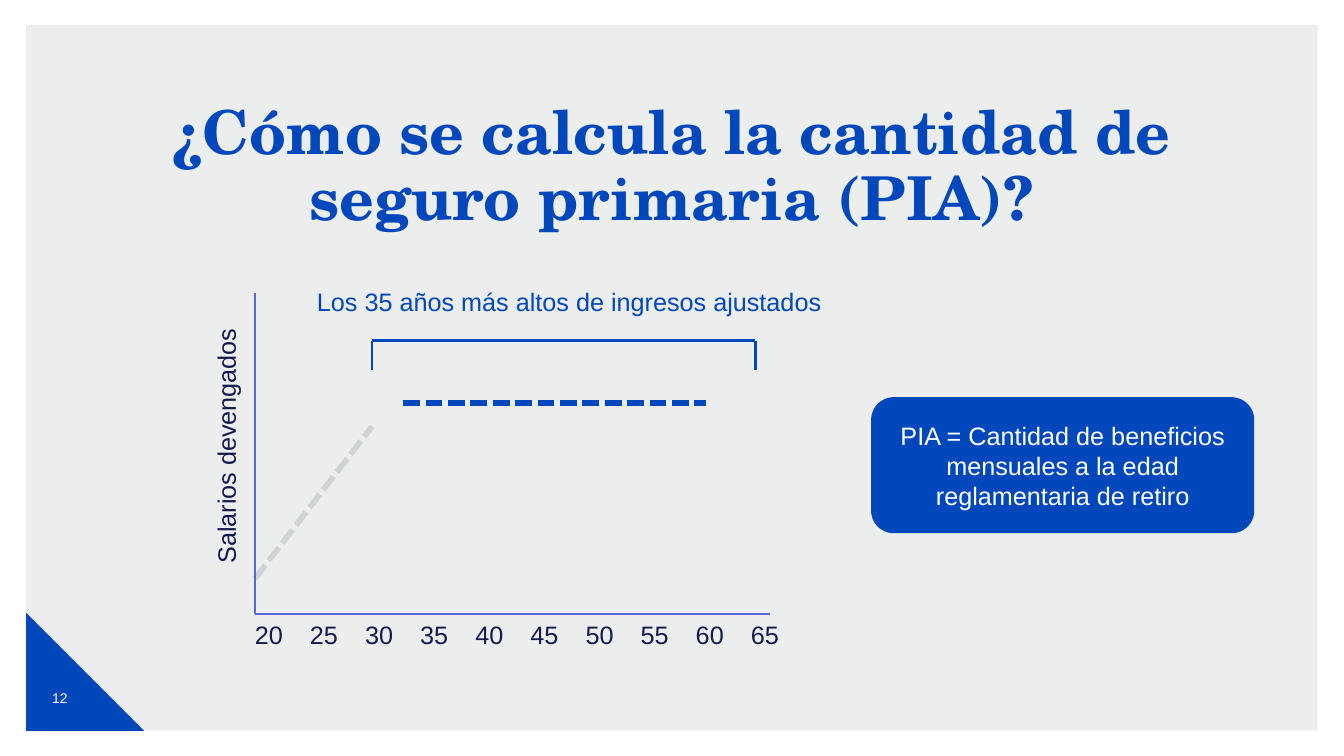
from dataclasses import dataclass

from lxml import etree
from pptx import Presentation
from pptx.dml.color import RGBColor
from pptx.enum.dml import MSO_LINE
from pptx.enum.shapes import MSO_CONNECTOR, MSO_SHAPE
from pptx.enum.text import MSO_ANCHOR, PP_ALIGN
from pptx.oxml.ns import qn
from pptx.util import Inches, Pt

STRAIGHT = MSO_CONNECTOR.STRAIGHT
RECTANGLE = MSO_SHAPE.RECTANGLE
RIGHT_TRIANGLE = MSO_SHAPE.RIGHT_TRIANGLE
ROUNDED = MSO_SHAPE.ROUNDED_RECTANGLE
DASH = MSO_LINE.SQUARE_DOT
CENTER = PP_ALIGN.CENTER
TOP, MIDDLE = MSO_ANCHOR.TOP, MSO_ANCHOR.MIDDLE

BLUE, NAVY, GRAY, WHITE = "0047BB", "141A4D", "D0D3D4", "FFFFFF"
AXIS_COLOR, CAPTION_BLUE = "5968D6", "0047BA"

AXIS_LEFT, AXIS_TOP, AXIS_RIGHT, AXIS_BOTTOM = 2.53, 2.91, 7.64, 6.09
BRACKET_LEFT, BRACKET_RIGHT, BRACKET_TOP, BRACKET_BOTTOM = 3.69, 7.49, 3.38, 3.67


@dataclass
class Label:
    text: str
    left: float
    top: float
    width: float
    height: float
    color: str
    size: float = 18
    font: str = "Arial"
    bold: bool = False
    anchor: MSO_ANCHOR = TOP
    line_spacing: float = 1.0
    rotation: float = 0
    left_inset: float = 0
    right_inset: float = 0


@dataclass
class Segment:
    x1: float
    y1: float
    x2: float
    y2: float
    color: str
    width: float
    dashed: bool = False


def rgb(color: str) -> RGBColor:
    return RGBColor.from_string(color)


def write_text(shape, text: str, color: str, size: float, font: str, bold: bool = False):
    frame = shape.text_frame
    frame.word_wrap = True
    frame.text = text
    paragraph = frame.paragraphs[0]
    paragraph.alignment = CENTER
    run_font = paragraph.runs[0].font
    run_font.name, run_font.size, run_font.bold = font, Pt(size), bold
    run_font.color.rgb = rgb(color)
    return paragraph


def add_label(slide, label: Label):
    shape = slide.shapes.add_textbox(
        Inches(label.left), Inches(label.top), Inches(label.width), Inches(label.height))
    shape.rotation = label.rotation
    paragraph = write_text(shape, label.text, label.color, label.size, label.font, label.bold)
    paragraph.line_spacing = label.line_spacing
    frame = shape.text_frame
    frame.vertical_anchor = label.anchor
    frame.margin_left = Inches(label.left_inset)
    frame.margin_right = Inches(label.right_inset)


def add_block(slide, kind, left: float, top: float, width: float, height: float, color: str):
    shape = slide.shapes.add_shape(
        kind, Inches(left), Inches(top), Inches(width), Inches(height))
    shape.shadow.inherit = False
    shape.fill.solid()
    shape.fill.fore_color.rgb = rgb(color)
    shape.line.fill.background()
    return shape


def style_line(line, color: str, width: float, dashed: bool):
    line.color.rgb = rgb(color)
    line.width = Pt(width)
    if dashed:
        line.dash_style = DASH


def add_segment(slide, segment: Segment):
    connector = slide.shapes.add_connector(
        STRAIGHT, Inches(segment.x1), Inches(segment.y1),
        Inches(segment.x2), Inches(segment.y2))
    style_line(connector.line, segment.color, segment.width, segment.dashed)
    etree.SubElement(connector.element.spPr, qn("a:effectLst"))


def add_curve(slide, points: list, color: str, width: float):
    """Draw a smooth dashed curve through the points."""
    builder = slide.shapes.build_freeform(*points[0], scale=Inches(1))
    builder.add_line_segments(points[1:], close=False)
    shape = builder.convert_to_shape()
    shape.shadow.inherit = False
    shape.fill.background()
    style_line(shape.line, color, width, dashed=True)

    # Turn each straight step into a Bezier whose handles follow the neighbours
    spots = [(int(pt.get("x")), int(pt.get("y"))) for pt in shape.element.iter(qn("a:pt"))]
    padded = [spots[0], *spots, spots[-1]]
    steps = list(shape.element.iter(qn("a:lnTo")))
    for step, before, start, end, after in zip(
            steps, padded, padded[1:], padded[2:], padded[3:]):
        first = [s + (e - b) // 6 for b, s, e in zip(before, start, end)]
        second = [e - (a - s) // 6 for s, e, a in zip(start, end, after)]
        bezier = etree.Element(qn("a:cubicBezTo"))
        for x, y in (first, second, end):
            etree.SubElement(bezier, qn("a:pt"), x=str(x), y=str(y))
        step.getparent().replace(step, bezier)


def main():
    presentation = Presentation()
    presentation.slide_width, presentation.slide_height = Inches(13.33), Inches(7.5)
    slide = presentation.slides.add_slide(presentation.slide_layouts[6])

    # Backdrop and corner
    backdrop = add_block(slide, RECTANGLE, 0.26, 0.25, 12.81, 7, GRAY)
    backdrop_color = next(backdrop.element.spPr.iter(qn("a:srgbClr")))
    etree.SubElement(backdrop_color, qn("a:alpha"), val="40000")
    add_block(slide, RIGHT_TRIANGLE, 0.26, 6.08, 1.17, 1.17, BLUE)

    # Page number, title, chart captions and age scale
    labels = [
        Label("12", 0.32, 6.63, 0.55, 0.58, WHITE, size=10, anchor=MIDDLE,
              left_inset=0.1, right_inset=0.1),
        Label("¿Cómo se calcula la cantidad de seguro primaria (PIA)?",
              1.63, 0.93, 10.06, 1.47, BLUE, size=43.2, font="TeX Gyre Schola",
              bold=True, anchor=MIDDLE, line_spacing=0.9),
        Label("Los 35 años más altos de ingresos ajustados",
              3, 2.79, 5.29, 0.49, CAPTION_BLUE),
        Label("Salarios devengados", 0.77, 4.18, 3.03, 0.49, NAVY, rotation=270),
    ]
    age_left, age_step = 2.47, (7.39 - 2.47) / 9
    labels += [
        Label(str(age), age_left + index * age_step, AXIS_BOTTOM, 0.49, 0.49, NAVY,
              right_inset=0.1)
        for index, age in enumerate(range(20, 70, 5))
    ]
    for label in labels:
        add_label(slide, label)

    # Earnings: early years, then the 35 highest
    add_segment(slide, Segment(AXIS_LEFT, 5.74, BRACKET_LEFT, 4.23, GRAY, 4, dashed=True))
    earnings = [
        (3.69, 4.22), (3.79, 4.18), (3.89, 4.16), (4.1, 4.18), (4.28, 4.22),
        (4.45, 4.2), (4.6, 4.15), (4.75, 4.11), (4.93, 4.09), (5.06, 4.05),
        (5.2, 3.97), (5.34, 3.93), (5.46, 3.91), (5.64, 3.85), (5.88, 3.86),
        (6.1, 3.94), (6.27, 3.98), (6.43, 3.94), (6.63, 3.87), (6.78, 3.84),
        (7.04, 3.85), (7.29, 3.84), (7.49, 3.83),
    ]
    add_curve(slide, earnings, BLUE, 4)

    # Axes and bracket
    for segment in (
        Segment(AXIS_LEFT, AXIS_TOP, AXIS_LEFT, AXIS_BOTTOM, AXIS_COLOR, 1),
        Segment(AXIS_LEFT, AXIS_BOTTOM, AXIS_RIGHT, AXIS_BOTTOM, AXIS_COLOR, 1),
        Segment(BRACKET_LEFT, BRACKET_BOTTOM, BRACKET_LEFT, BRACKET_TOP, BLUE, 2),
        Segment(BRACKET_LEFT, BRACKET_TOP, BRACKET_RIGHT, BRACKET_TOP, BLUE, 2),
        Segment(BRACKET_RIGHT, BRACKET_TOP, BRACKET_RIGHT, BRACKET_BOTTOM, BLUE, 2),
    ):
        add_segment(slide, segment)

    # Definition
    definition = add_block(slide, ROUNDED, 8.64, 3.94, 3.8, 1.35, BLUE)
    write_text(definition,
               "PIA = Cantidad de beneficios mensuales a la edad reglamentaria de retiro",
               WHITE, 18, "Arial")
    definition.text_frame.vertical_anchor = MIDDLE

    presentation.save("out.pptx")


if __name__ == "__main__":
    main()
